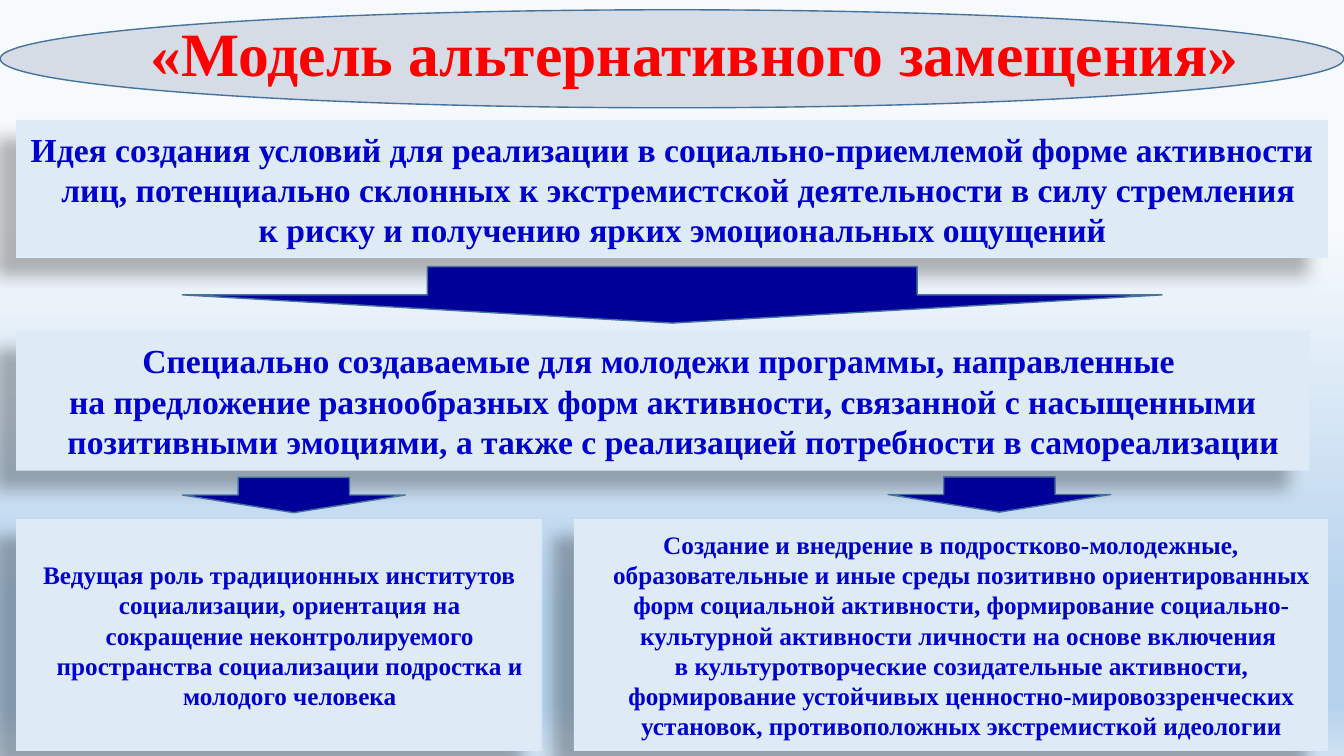
"""Builds the slide on the model of alternative substitution."""
import lxml.etree
import pptx
import pptx.dml.color
import pptx.enum.shapes
import pptx.enum.text
import pptx.oxml
import pptx.oxml.ns
import pptx.util
from pptx.util import Pt

TITLE = "«Модель альтернативного замещения»"
IDEA = [[
    "Идея создания условий для реализации в социально-приемлемой форме активности "
    "лиц, потенциально склонных к экстремистской деятельности в силу стремления ",
    "к риску и получению ярких эмоциональных ощущений",
]]
PROGRAMS = [
    ["Специально создаваемые для молодежи программы, направленные "],
    ["на предложение разнообразных форм активности, связанной с насыщенными "
     "позитивными эмоциями, а также с реализацией потребности в самореализации"],
]
INSTITUTIONS = [[
    "Ведущая роль традиционных институтов социализации, ориентация на сокращение "
    "неконтролируемого пространства социализации подростка и молодого человека",
]]
ENVIRONMENTS = [[
    "Создание и внедрение в подростково-молодежные, образовательные и иные среды "
    "позитивно ориентированных форм социальной активности, формирование "
    "социально-культурной активности личности на основе включения ",
    "в культуротворческие созидательные активности, формирование устойчивых "
    "ценностно-мировоззренческих установок, противоположных экстремисткой идеологии",
]]

THEME = {
    "font": "Times New Roman",
    "title_size": 44, "main_size": 24, "detail_size": 18,
    "title": "FF0000", "text": "0000CC", "panel": "DEEBF7",
    "ellipse": "D6DCE5", "arrow": "000099", "outline": "43739E",
    "background": [(29, "F7FAFD"), (81, "B5D2EC"), (93, "B5D2EC"), (100, "CEE1F2")],
    "shadow": {"color": "000000", "alpha": 28, "blur": 11.8, "distance": 19.7, "angle": 141},
}

WIDTH, HEIGHT = 960, 540
MARGIN = 11.5
INDENT = 15
DETAIL_TOP, DETAIL_HEIGHT = 370.8, 165.6
RIGHT_LEFT = 410
FULL_WIDTH = WIDTH - 2 * MARGIN
PANELS = [
    (IDEA, "main_size", (MARGIN, 85.7, FULL_WIDTH, 98.6)),
    (PROGRAMS, "main_size", (MARGIN, 236.2, 923.8, 100)),
    (INSTITUTIONS, "detail_size", (MARGIN, DETAIL_TOP, 375.8, DETAIL_HEIGHT)),
    (ENVIRONMENTS, "detail_size",
     (RIGHT_LEFT, DETAIL_TOP, WIDTH - MARGIN - RIGHT_LEFT, DETAIL_HEIGHT)),
]
ARROWS = [(130.3, 190.5, 699.8, 40.3), (130.3, 341, 159.1, 25.2), (634.3, 340.6, 159.1, 25.2)]
SHAPES = pptx.enum.shapes.MSO_SHAPE
NAMESPACE = pptx.oxml.ns.nsdecls("a")


def color(name):
    return pptx.dml.color.RGBColor.from_string(THEME[name])


def paint_background(slide):
    slide.background.fill.gradient()
    gradient = slide.background._cSld.find(".//" + pptx.oxml.ns.qn("a:gradFill"))
    stops = "".join(
        f'<a:gs pos="{position * 1000}"><a:srgbClr val="{value}"/></a:gs>'
        for position, value in THEME["background"])
    replacement = pptx.oxml.parse_xml(
        f'<a:gradFill {NAMESPACE} rotWithShape="1"><a:gsLst>{stops}</a:gsLst>'
        f'<a:lin ang="{90 * 60000}" scaled="0"/></a:gradFill>')
    gradient.getparent().replace(gradient, replacement)


def add_shape(slide, kind, box, fill, outlined=True):
    shape = slide.shapes.add_shape(kind, *map(Pt, box))
    shape.shadow.inherit = False
    shape.fill.solid()
    shape.fill.fore_color.rgb = color(fill)
    if outlined:
        shape.line.color.rgb = color("outline")
        shape.line.width = Pt(1)
    else:
        shape.line.fill.background()
    return shape


def add_shadow(shape):
    shadow = THEME["shadow"]
    effects = shape._element.spPr.find(pptx.oxml.ns.qn("a:effectLst"))
    effects.append(pptx.oxml.parse_xml(
        f'<a:outerShdw {NAMESPACE} blurRad="{Pt(shadow["blur"])}" '
        f'dist="{Pt(shadow["distance"])}" dir="{shadow["angle"] * 60000}" '
        f'algn="ctr" rotWithShape="0"><a:srgbClr val="{shadow["color"]}">'
        f'<a:alpha val="{shadow["alpha"] * 1000}"/></a:srgbClr></a:outerShdw>'))


def write(frame, paragraphs, size, color_name, indent=0):
    frame.word_wrap = True
    for index, lines in enumerate(paragraphs):
        paragraph = frame.add_paragraph() if index else frame.paragraphs[0]
        paragraph.alignment = pptx.enum.text.PP_ALIGN.CENTER
        if indent:
            properties = paragraph._p.get_or_add_pPr()
            properties.set("marL", str(Pt(indent)))
            properties.set("indent", str(-Pt(indent)))
        for number, line in enumerate(lines):
            if number:
                paragraph.add_line_break()
            run = paragraph.add_run()
            run.text = line
            run.font.name = THEME["font"]
            run.font.size = Pt(THEME[size])
            run.font.bold = True
            run.font.color.rgb = color(color_name)


def add_title(slide):
    add_shape(slide, SHAPES.OVAL, (0, 7, WIDTH, 70), "ellipse")
    title = slide.shapes.add_textbox(*map(Pt, (90.7, 7.2, 811.4, 60.5)))
    write(title.text_frame, [[TITLE]], "title_size", "title")
    title.text_frame.paragraphs[0].space_before = Pt(5)


def add_panel(slide, paragraphs, size, box):
    panel = add_shape(slide, SHAPES.RECTANGLE, box, "panel", outlined=False)
    add_shadow(panel)
    panel.text_frame.vertical_anchor = pptx.enum.text.MSO_ANCHOR.MIDDLE
    write(panel.text_frame, paragraphs, size, "text", INDENT)


def main():
    presentation = pptx.Presentation()
    presentation.slide_width, presentation.slide_height = Pt(WIDTH), Pt(HEIGHT)
    slide = presentation.slides.add_slide(presentation.slide_layouts[6])
    paint_background(slide)
    add_title(slide)
    for paragraphs, size, box in PANELS:
        add_panel(slide, paragraphs, size, box)
    for box in ARROWS:
        add_shape(slide, SHAPES.DOWN_ARROW, box, "arrow")
    presentation.save("out.pptx")


if __name__ == "__main__":
    main()
